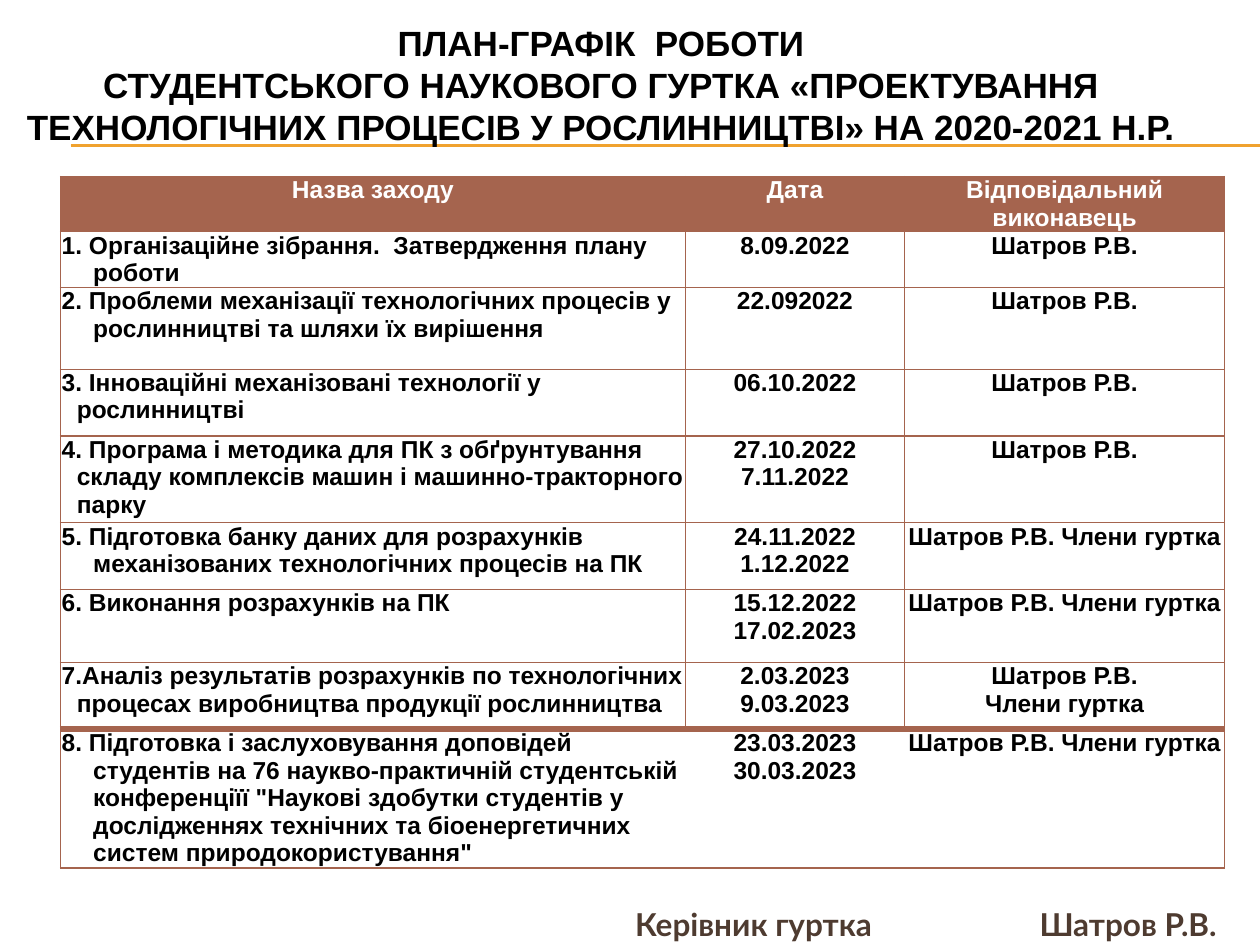
from lxml import etree
from pptx import Presentation
from pptx.dml.color import RGBColor
from pptx.enum.shapes import MSO_CONNECTOR
from pptx.enum.text import MSO_ANCHOR, MSO_AUTO_SIZE, PP_ALIGN
from pptx.oxml.ns import qn
from pptx.util import Inches, Pt

BROWN, GOLD, BLACK, WHITE, DARK = "A5644E", "F0A22E", "000000", "FFFFFF", "4E3B30"
THIN, THICK = 0.79, 4

LEADER = "Шатров Р.В."
TEAM = "Шатров Р.В. Члени гуртка"
HEADER = ("Назва заходу", "Дата", "Відповідальний виконавець")
# row height, hanging indent, activity, dates, people
EVENTS = [
    (0.44, 0.25, "1. Організаційне зібрання.  Затвердження плану роботи",
     ["8.09.2022"], [LEADER]),
    (0.65, 0.25, "2. Проблеми механізації технологічних процесів у рослинництві "
     "та шляхи їх вирішення", ["22.092022"], [LEADER]),
    (0.53, 0.12, "3. Інноваційні механізовані технології у рослинництві",
     ["06.10.2022"], [LEADER]),
    (0.69, 0.12, "4. Програма і методика для ПК з обґрунтування складу комплексів "
     "машин і машинно-тракторного парку", ["27.10.2022", "7.11.2022"], [LEADER]),
    (0.53, 0.25, "5. Підготовка банку даних для розрахунків механізованих "
     "технологічних процесів на ПК", ["24.11.2022", "1.12.2022"], [TEAM]),
    (0.58, 0, "6. Виконання розрахунків на ПК",
     ["15.12.2022", "17.02.2023"], [TEAM]),
    (0.53, 0.12, "7.Аналіз результатів розрахунків по технологічних процесах "
     "виробництва продукції рослинництва",
     ["2.03.2023", "9.03.2023"], [LEADER, "Члени гуртка"]),
    (1.1, 0.25, "8. Підготовка і заслуховування доповідей студентів на 76 "
     "наукво-практичній студентській конференціїї \"Наукові здобутки студентів у "
     "дослідженнях технічних та біоенергетичних систем природокористування\"",
     ["23.03.2023", "30.03.2023"], [TEAM]),
]


def rgb(color):
    return RGBColor.from_string(color)


def add_run(p, text, size, color, font="Arial"):
    r = p.add_run()
    r.text = text
    r.font.size, r.font.bold, r.font.name = Pt(size), True, font
    r.font.color.rgb = rgb(color)


def add_rule(s, x1, x2, y):
    """Draw a thin gold line behind everything else."""
    line = s.shapes.add_connector(MSO_CONNECTOR.STRAIGHT, Inches(x1), Inches(y),
                                  Inches(x2), Inches(y))
    line.line.color.rgb = rgb(GOLD)
    line.line.width = Pt(0.75)
    etree.SubElement(line._element.spPr, qn("a:effectLst"))
    s.shapes._spTree.insert(2, line._element)


def fill_title(s, x, y, w, h):
    sp = s.shapes.title
    sp.left, sp.top, sp.width, sp.height = map(Inches, (x, y, w, h))
    tf = sp.text_frame
    tf.word_wrap, tf.auto_size = True, MSO_AUTO_SIZE.NONE
    tf.vertical_anchor = MSO_ANCHOR.MIDDLE
    p = tf.paragraphs[0]
    p.alignment, p.line_spacing = PP_ALIGN.CENTER, 1.0
    add_run(p, "ПЛАН-ГРАФІК  РОБОТИ", 20, BLACK)
    p.add_line_break()
    add_run(p, "СТУДЕНТСЬКОГО НАУКОВОГО ГУРТКА «ПРОЕКТУВАННЯ ТЕХНОЛОГІЧНИХ "
            "ПРОЦЕСІВ У РОСЛИННИЦТВІ» НА 2020-2021 Н.Р.", 20, BLACK)


def set_borders(cell, left, right, top, bottom):
    """Set border widths in points; 0 hides the side."""
    tcPr = cell._tc.get_or_add_tcPr()
    for side, width in zip("LRTB", (left, right, top, bottom)):
        ln = etree.SubElement(tcPr, qn(f"a:ln{side}"), w=str(Pt(width)))
        if width:
            fill = etree.SubElement(ln, qn("a:solidFill"))
            etree.SubElement(fill, qn("a:srgbClr"), val=BROWN)
        else:
            etree.SubElement(ln, qn("a:noFill"))


def fill_cell(cell, lines, color, indent=None):
    """Write one paragraph a line: centred, or hanging when an indent is given."""
    cell.margin_left = cell.margin_right = Inches(0.01)
    cell.margin_top = cell.margin_bottom = 0
    tf = cell.text_frame
    for i, text in enumerate(lines):
        p = tf.add_paragraph() if i else tf.paragraphs[0]
        if indent is None:
            p.alignment = PP_ALIGN.CENTER
        else:
            pPr = p._p.get_or_add_pPr()
            pPr.set("marL", str(Inches(indent)))
            pPr.set("indent", str(-Inches(indent)))
        add_run(p, text, 14, color)


def add_schedule(s, x, y, widths):
    heights = [0.44] + [event[0] for event in EVENTS]
    table = s.shapes.add_table(len(heights), len(widths), Inches(x), Inches(y),
                               Inches(sum(widths)), Inches(sum(heights))).table
    table.horz_banding = False
    for column, width in zip(table.columns, widths):
        column.width = Inches(width)
    for row, height in zip(table.rows, heights):
        row.height = Inches(height)

    last_row, last_col = len(heights) - 1, len(widths) - 1
    for i, row in enumerate(table.rows):
        for j, cell in enumerate(row.cells):
            inner = 0 if i == last_row else THIN
            set_borders(cell, inner if j else THIN,
                        inner if j < last_col else THIN,
                        THICK if i == last_row else THIN,
                        THICK if i == last_row - 1 else THIN)
            if i:
                cell.fill.background()
            else:
                cell.fill.solid()
                cell.fill.fore_color.rgb = rgb(BROWN)

    for j, text in enumerate(HEADER):
        fill_cell(table.cell(0, j), [text], WHITE)
    for i, (_, indent, activity, dates, people) in enumerate(EVENTS, 1):
        fill_cell(table.cell(i, 0), [activity], BLACK, indent)
        fill_cell(table.cell(i, 1), dates, BLACK)
        fill_cell(table.cell(i, 2), people, BLACK)


def add_signature(s, x, y, w, h):
    """Write the role and, after a tab stop, the name on one line."""
    tf = s.shapes.add_textbox(*map(Inches, (x, y, w, h))).text_frame
    tf.word_wrap = True
    tf.margin_left, tf.margin_right = Inches(4.5), 0
    p = tf.paragraphs[0]
    p.space_before = Pt(3.6)
    tabs = etree.SubElement(p._p.get_or_add_pPr(), qn("a:tabLst"))
    etree.SubElement(tabs, qn("a:tab"), pos=str(Inches(3.21)), algn="l")
    add_run(p, "Керівник гуртка\t", 18, DARK, "Lato")
    add_run(p, LEADER, 18, DARK, "Lato")


def main():
    prs = Presentation()
    prs.slide_width, prs.slide_height = Inches(10), Inches(7.5)
    s = prs.slides.add_slide(prs.slide_layouts[5])
    for y in (1.15, 1.16):
        add_rule(s, 0.56, 10, y)
    fill_title(s, 0.02, 0.21, 9.5, 0.92)
    add_schedule(s, 0.48, 1.4, (4.96, 1.74, 2.54))
    add_signature(s, 0.54, 7.13, 9.22, 0.34)
    prs.save("out.pptx")


if __name__ == "__main__":
    main()
